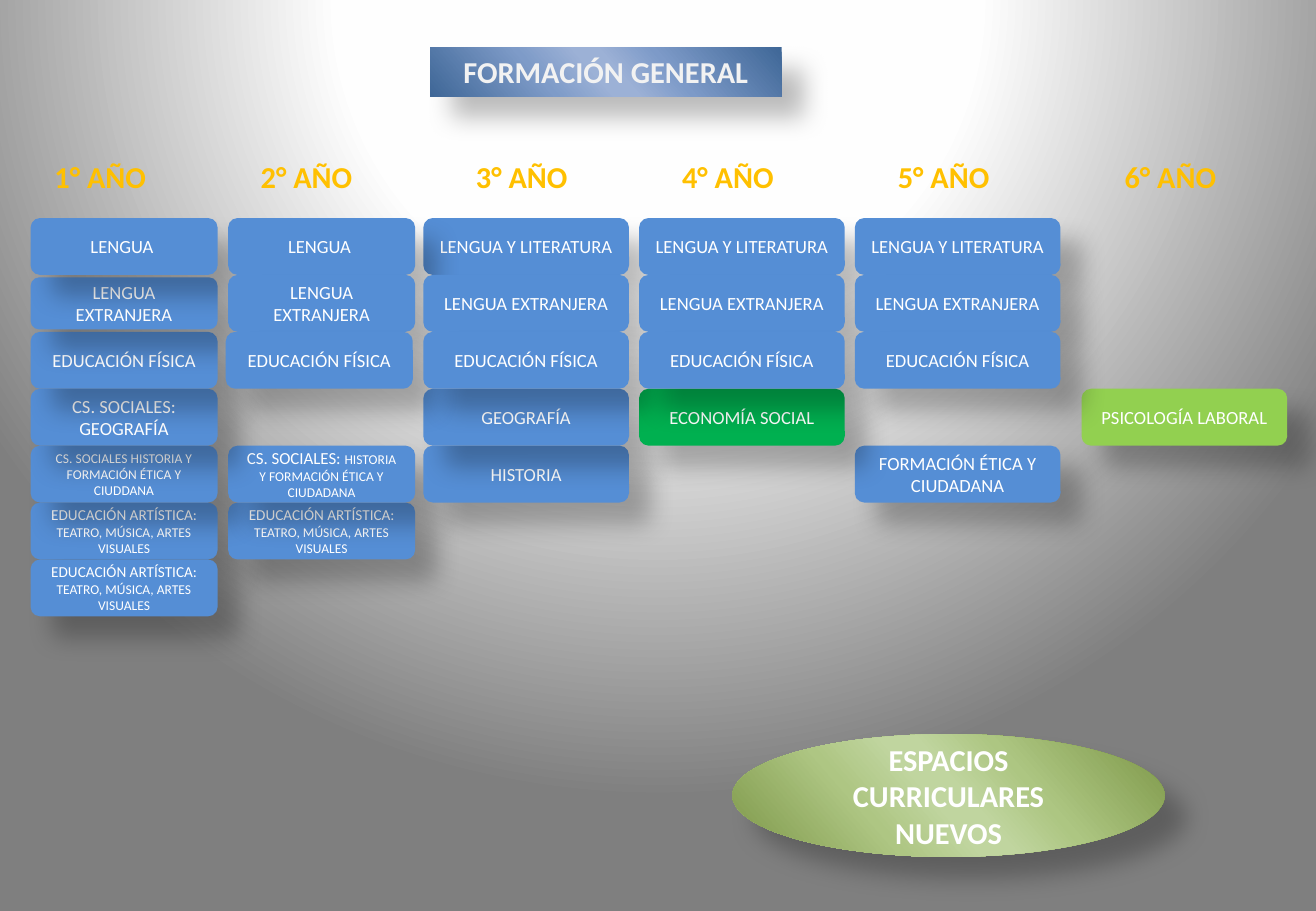
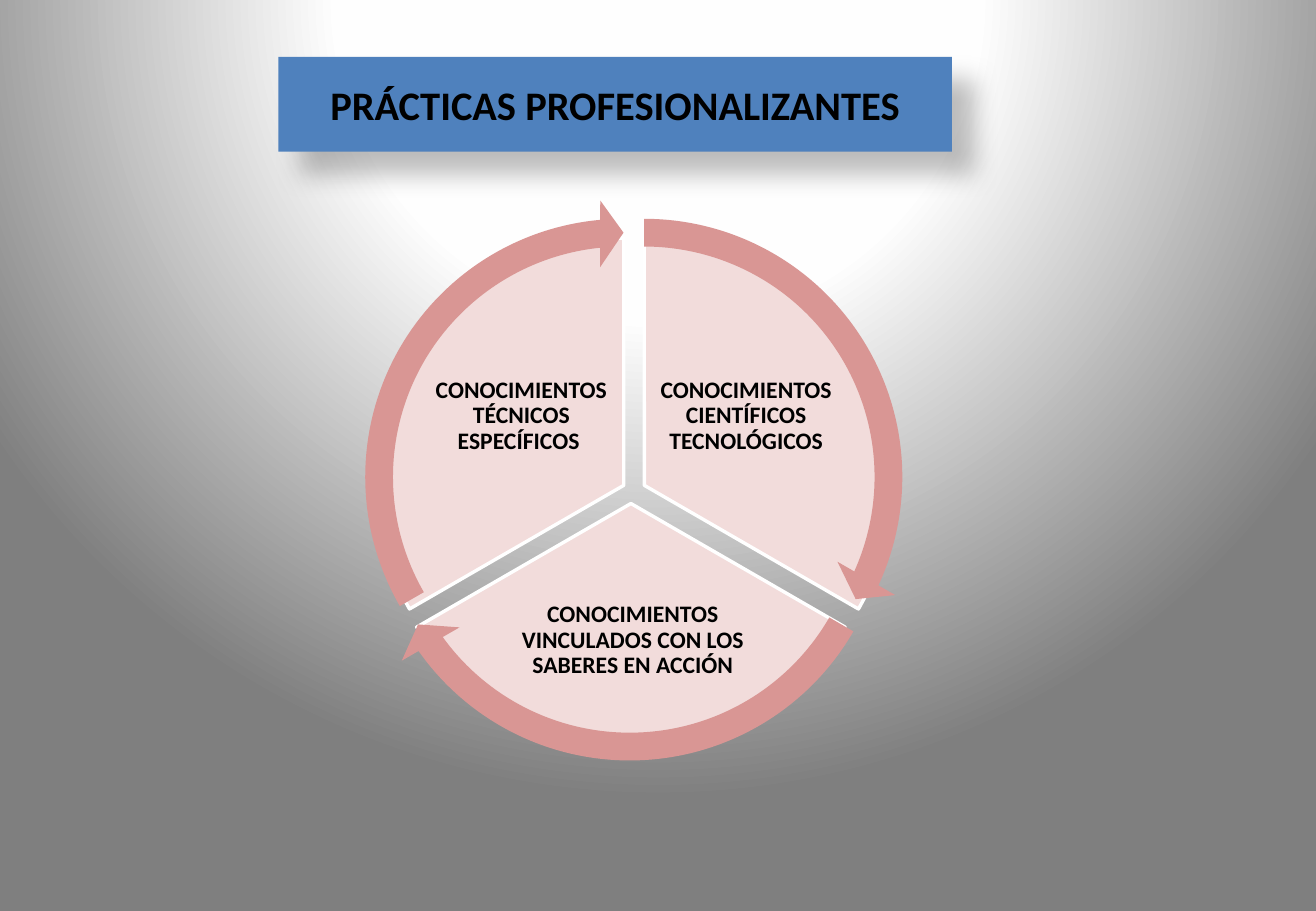
from dataclasses import dataclass

from lxml import etree
from pptx import Presentation
from pptx.dml.color import RGBColor
from pptx.enum.shapes import MSO_SHAPE
from pptx.enum.text import MSO_ANCHOR, MSO_AUTO_SIZE, PP_ALIGN
from pptx.oxml.ns import qn
from pptx.util import Cm, Pt

ROUNDED = MSO_SHAPE.ROUNDED_RECTANGLE
ELLIPSE = MSO_SHAPE.OVAL
PIE = MSO_SHAPE.PIE
CIRCULAR_ARROW = MSO_SHAPE.CIRCULAR_ARROW
MIDDLE = MSO_ANCHOR.MIDDLE
TOP = MSO_ANCHOR.TOP
CENTER = PP_ALIGN.CENTER
LEFT = PP_ALIGN.LEFT
NO_AUTO_SIZE = MSO_AUTO_SIZE.NONE
TITLE_ONLY = 5


@dataclass(frozen=True)
class Theme:
    font: str = "Calibri"
    white: str = "FFFFFF"
    black: str = "000000"
    pale: str = "F2F2F2"
    gold: str = "FFC000"
    subject: str = "558ED5"
    green: str = "00B050"
    lime: str = "92D050"
    banner: str = "4F81BD"
    slice: str = "F2DCDB"
    arrow: str = "D99694"
    page_stops: tuple = ((0, "FFFFFF"), (40, "FEFEFE"), (100, "7F7F7F"))
    blue_stops: tuple = ((0, "3F6797"), (33, "7D9AC8"), (47, "9CB1D6"),
                         (53, "9CB1D6"), (68, "7E9BC8"), (100, "3F6797"))
    green_stops: tuple = ((0, "7C9647"), (33, "ADC682"), (47, "C0D59F"),
                          (53, "C0D59F"), (68, "AEC683"), (100, "7C9647"))
    banner_size: int = 24
    heading_size: int = 18
    label_size: int = 14
    subject_size: int = 11
    compact_size: int = 10
    small_size: int = 9
    detail_size: int = 8


THEME = Theme()


@dataclass(frozen=True)
class Box:
    left: float
    top: float
    width: float
    height: float

    def inside(self, left, top, width, height):
        return Box(self.left + left, self.top + top, width, height)

    def lengths(self):
        return Cm(self.left), Cm(self.top), Cm(self.width), Cm(self.height)


PAGE = Box(0, 0, 27.51, 19.05)

COLUMNS = ((0, 3.91), (4.13, 3.91), (8.21, 4.3), (12.72, 4.3), (17.23, 4.3), (21.97, 4.3))
HEADING_LEFTS = (0.25, 4.56, 9.06, 13.37, 17.88, 22.62)
ROW_HEIGHT = 1.19
NUDGES = {(1, 0): (0, 0.05, -0.1), (2, 1): (-0.05, 0, 0)}

ARTS = (("EDUCACIÓN ARTÍSTICA: ", THEME.small_size),
        ("TEATRO, MÚSICA, ARTES VISUALES", THEME.detail_size))
HISTORY_ETHICS = (("CS. SOCIALES: ", THEME.compact_size),
                  ("HISTORIA Y FORMACIÓN ÉTICA Y CIUDADANA", THEME.detail_size))
FIRST_HISTORY = (("CS. SOCIALES HISTORIA Y FORMACIÓN ÉTICA Y CIUDDANA", THEME.detail_size),)
LITERATURE = "LENGUA Y LITERATURA"
FOREIGN = "LENGUA EXTRANJERA"
SPORT = "EDUCACIÓN FÍSICA"
ECONOMY = "ECONOMÍA SOCIAL"
PSYCHOLOGY = "PSICOLOGÍA LABORAL"
NEW_SUBJECTS = {ECONOMY: THEME.green, PSYCHOLOGY: THEME.lime}

SUBJECT_ROWS = (
    (5, 0, (ARTS, ARTS)),
    (4, 0, (FIRST_HISTORY, HISTORY_ETHICS, "HISTORIA", None, "FORMACIÓN ÉTICA Y CIUDADANA")),
    (3, 0, ("CS. SOCIALES: GEOGRAFÍA", None, "GEOGRAFÍA", ECONOMY, None, PSYCHOLOGY)),
    (2, 0, (SPORT,)),
    (1, 0, (FOREIGN,)),
    (0, 2, (LITERATURE,) * 3),
    (0, 0, ("LENGUA ",) * 2),
    (1, 1, (FOREIGN,) * 4),
    (2, 1, (SPORT,) * 4),
    (6, 0, (ARTS,)),
)


@dataclass(frozen=True)
class Sector:
    text: str
    start: int
    end: int
    pie_at: tuple
    arrow_at: tuple
    label: tuple


SECTORS = (
    Sector("CONOCIMIENTOS CIENTÍFICOS TECNOLÓGICOS", 270, 30,
           (1.07, 0.81), (0.43, 0), (6.53, 3, 3.68, 3.07)),
    Sector("CONOCIMIENTOS VINCULADOS CON LOS SABERES EN ACCIÓN", 30, 150,
           (0.79, 1.19), (0.13, 0.53), (3.23, 7.87, 5.54, 2.72)),
    Sector("CONOCIMIENTOS TÉCNICOS ESPECÍFICOS ", 150, 270,
           (0.64, 0.81), (0, 0), (1.83, 3, 3.68, 3.07)),
)
PIE_SIZE = 10.34
ARROW_SIZE = 11.61
ARROW_GAP = 5.46
ANGLE_UNIT = 0.6


def color(value):
    return RGBColor.from_string(value)


def paint_gradient(fill, root, stops, angle=None):
    fill.gradient()
    gradient = root.find(".//" + qn("a:gradFill"))
    for child in list(gradient):
        gradient.remove(child)
    stop_list = etree.SubElement(gradient, qn("a:gsLst"))
    for position, value in stops:
        stop = etree.SubElement(stop_list, qn("a:gs"), pos=str(position * 1000))
        etree.SubElement(stop, qn("a:srgbClr"), val=value)
    if angle is None:
        circle = etree.SubElement(gradient, qn("a:path"), path="circle")
        etree.SubElement(circle, qn("a:fillToRect"), l="50000", t="-80000", r="50000", b="180000")
    else:
        etree.SubElement(gradient, qn("a:lin"), ang=str(angle * 60000), scaled="0")


def paint(shape, fill, shadow=True):
    if isinstance(fill, str):
        shape.fill.solid()
        shape.fill.fore_color.rgb = color(fill)
    else:
        paint_gradient(shape.fill, shape.element, fill, 139)
    shape.line.fill.background()
    shape.shadow.inherit = False
    if shadow:
        effects = shape.element.find(".//" + qn("a:effectLst"))
        outer = etree.SubElement(effects, qn("a:outerShdw"), blurRad=str(Pt(15)), dist=str(Pt(18)),
                                 dir=str(45 * 60000), algn="tl", rotWithShape="0")
        tone = etree.SubElement(outer, qn("a:srgbClr"), val=THEME.black)
        etree.SubElement(tone, qn("a:alpha"), val="26000")


def write(shape, spans, text_color, bold=False, align=CENTER, anchor=MIDDLE):
    frame = shape.text_frame
    frame.word_wrap = True
    frame.auto_size = NO_AUTO_SIZE
    frame.vertical_anchor = anchor
    para = frame.paragraphs[0]
    para.alignment = align
    for text, size in spans:
        span = para.add_run()
        span.text = text
        span.font.name = THEME.font
        span.font.size = Pt(size)
        span.font.bold = bold
        span.font.color.rgb = color(text_color)
    return para


def add_titled_page(deck, box, text, size, text_color, fill):
    page = deck.slides.add_slide(deck.slide_layouts[TITLE_ONLY])
    title = page.shapes.title
    title.left, title.top, title.width, title.height = box.lengths()
    paint(title, fill)
    write(title, ((text, size),), text_color, bold=True)
    return page


def add_headings(page, box):
    for year, left in enumerate(HEADING_LEFTS, 1):
        heading = page.shapes.add_textbox(*box.inside(left, 0, 3, box.height).lengths())
        write(heading, ((f"{year}° AÑO", THEME.heading_size),), THEME.gold, True, LEFT, TOP)


def add_subjects(page, box):
    for row, first_column, subjects in SUBJECT_ROWS:
        for column, subject in enumerate(subjects, first_column):
            if subject is None:
                continue
            left, width = COLUMNS[column]
            right_shift, down_shift, growth = NUDGES.get((row, column), (0, 0, 0))
            place = box.inside(left + right_shift, row * ROW_HEIGHT + down_shift,
                               width, ROW_HEIGHT + growth)
            card = page.shapes.add_shape(ROUNDED, *place.lengths())
            paint(card, NEW_SUBJECTS.get(subject, THEME.subject))
            spans = ((subject, THEME.subject_size),) if isinstance(subject, str) else subject
            write(card, spans, THEME.white)


def add_legend(page, box):
    legend = page.shapes.add_shape(ELLIPSE, *box.lengths())
    paint(legend, THEME.green_stops)
    write(legend, (("ESPACIOS CURRICULARES NUEVOS", THEME.heading_size),), THEME.white, bold=True)


def add_wheel(page, box):
    for sector in SECTORS:
        place = box.inside(*sector.pie_at, PIE_SIZE, PIE_SIZE)
        pie = page.shapes.add_shape(PIE, *place.lengths())
        pie.adjustments[0] = sector.start * ANGLE_UNIT
        pie.adjustments[1] = sector.end * ANGLE_UNIT
        paint(pie, THEME.slice, shadow=False)
        pie.line.color.rgb = color(THEME.white)
        pie.line.width = Pt(2)
        label = page.shapes.add_textbox(*box.inside(*sector.label).lengths())
        frame = label.text_frame
        frame.margin_left = frame.margin_right = Cm(0.02)
        frame.margin_top = frame.margin_bottom = Cm(0.05)
        para = write(label, ((sector.text, THEME.label_size),), THEME.black, bold=True)
        para.line_spacing = 0.9
    for sector in SECTORS:
        place = box.inside(*sector.arrow_at, ARROW_SIZE, ARROW_SIZE)
        arrow = page.shapes.add_shape(CIRCULAR_ARROW, *place.lengths())
        angles = ((sector.end - ARROW_GAP) * ANGLE_UNIT, sector.start * ANGLE_UNIT)
        for index, value in enumerate((0.05, 3.28, *angles, 0.06)):
            arrow.adjustments[index] = value
        paint(arrow, THEME.arrow, shadow=False)


def add_curriculum_page(deck, box):
    page = add_titled_page(deck, box.inside(8.99, 0.99, 7.35, 1.02), "FORMACIÓN GENERAL",
                           THEME.heading_size, THEME.pale, THEME.blue_stops)
    add_subjects(page, box.inside(0.64, 4.56, 26.26, 7 * ROW_HEIGHT))
    add_headings(page, box.inside(0.64, 3.18, 26.26, 1.02))
    add_legend(page, box.inside(15.31, 15.35, 9.04, 2.57))


def add_practice_page(deck, box):
    page = add_titled_page(deck, box.inside(5.82, 1.19, 14.08, 1.98), "PRÁCTICAS PROFESIONALIZANTES",
                           THEME.banner_size, THEME.black, THEME.banner)
    add_wheel(page, box.inside(7.23, 4.17, 12.04, 12.14))


def main():
    deck = Presentation()
    deck.slide_width, deck.slide_height = Cm(PAGE.width), Cm(PAGE.height)
    master = deck.slide_master
    paint_gradient(master.background.fill, master.element, THEME.page_stops)
    add_curriculum_page(deck, PAGE)
    add_practice_page(deck, PAGE)
    deck.save("out.pptx")


if __name__ == "__main__":
    main()
